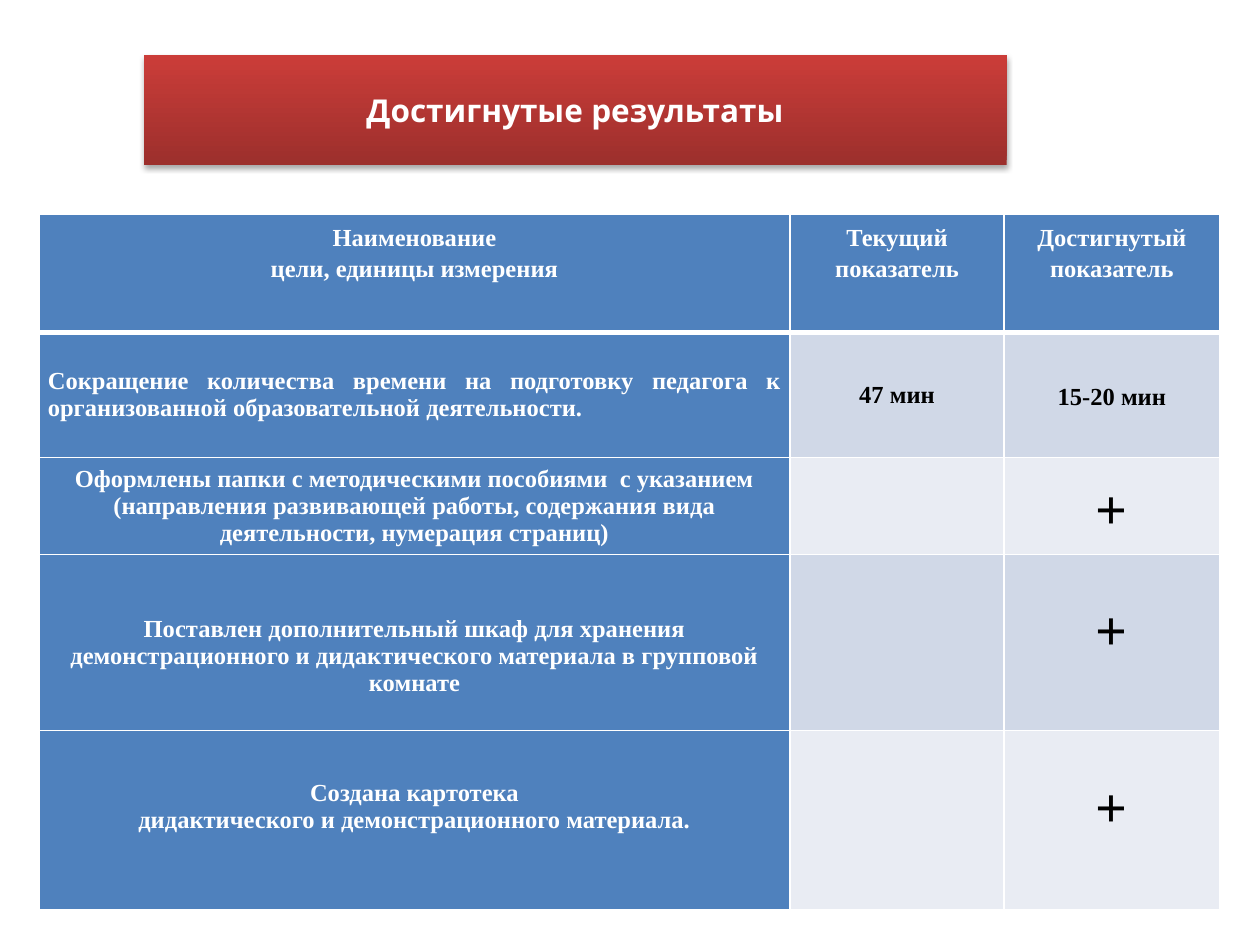
from lxml import etree
from pptx import Presentation
from pptx import util as u
from pptx.dml.color import RGBColor
from pptx.enum import text
from pptx.oxml import parse_xml
from pptx.oxml.ns import nsdecls, qn

FONT = "Times New Roman"
WHITE, BLACK, BLUE = "FFFFFF", "000000", "4F81BD"
BANDS = ("D0D8E7", "E9ECF3")
COLUMN_WIDTHS = (5.96, 1.7, 1.71)
ROW_HEIGHTS = (0.94, 0.99, 0.77, 1.4, 1.42)
LEFT, CENTER, JUSTIFY = text.PP_ALIGN.LEFT, text.PP_ALIGN.CENTER, text.PP_ALIGN.JUSTIFY

HEADERS = (
    "Наименование\nцели, единицы измерения",
    "Текущий показатель",
    "Достигнутый\nпоказатель",
)
# Goal, current value, achieved value, and format options for goal and result
RESULTS = (
    ("Сокращение количества времени на подготовку педагога к организованной "
     "образовательной деятельности.", "47 мин", "15-20 мин",
     {"align": JUSTIFY}, {}),
    ("Оформлены папки с методическими пособиями  с указанием (направления "
     "развивающей работы, содержания вида деятельности, нумерация страниц)",
     "", "+", {}, {"size": 32}),
    ("Поставлен дополнительный шкаф для хранения демонстрационного и "
     "дидактического материала в групповой комнате",
     "", "+", {"top": 0.27}, {"size": 32, "bottom": 0.3}),
    ("Создана картотека\nдидактического и демонстрационного материала.",
     "", "+", {"bottom": 0.26}, {"size": 32, "bottom": 0.3}),
)


def color(value):
    return RGBColor.from_string(value)


def write_text(frame, content, font=FONT, size=14, ink=WHITE, align=CENTER, spacing=1.0):
    """Fill a text frame with one bold paragraph for each line of content."""
    for number, line in enumerate(content.split("\n")):
        paragraph = frame.add_paragraph() if number else frame.paragraphs[0]
        paragraph.alignment = align
        paragraph.line_spacing = spacing
        run = paragraph.add_run()
        run.text = line
        run.font.name = font
        run.font.size = u.Pt(size)
        run.font.bold = True
        run.font.color.rgb = color(ink)


def add_shadow(shape):
    """Add a soft shadow falling straight down."""
    shape._element.spPr.append(parse_xml(
        f'<a:effectLst {nsdecls("a")}>'
        '<a:outerShdw blurRad="39370" dist="22860" dir="5400000" rotWithShape="0">'
        '<a:srgbClr val="000000"><a:alpha val="35000"/></a:srgbClr>'
        '</a:outerShdw></a:effectLst>'))


def set_borders(cell, bottom_width):
    """Draw white borders; they come before the fill in the cell properties."""
    properties = cell._tc.get_or_add_tcPr()
    widths = {"lnL": 0.96, "lnR": 0.96, "lnT": 0.96, "lnB": bottom_width}
    for position, (side, width) in enumerate(widths.items()):
        line = etree.Element(qn(f"a:{side}"), w=str(u.Pt(width)))
        fill = etree.SubElement(line, qn("a:solidFill"))
        etree.SubElement(fill, qn("a:srgbClr"), val=WHITE)
        properties.insert(position, line)


def fill_cell(cell, content, background, anchor=text.MSO_ANCHOR.MIDDLE,
              top=0.05, bottom=0.05, bottom_border=0.96, **text_format):
    cell.margin_left = cell.margin_right = u.Inches(0.07)
    cell.margin_top, cell.margin_bottom = u.Inches(top), u.Inches(bottom)
    cell.vertical_anchor = anchor
    cell.fill.solid()
    cell.fill.fore_color.rgb = color(background)
    set_borders(cell, bottom_border)
    if content:
        write_text(cell.text_frame, content, **text_format)


def add_title(slide):
    title = slide.shapes.title
    title.left, title.top = u.Inches(1.14), u.Inches(0.44)
    title.width, title.height = u.Inches(6.85), u.Inches(0.87)
    title.fill.gradient()
    title.fill.gradient_angle = 90
    for stop, value in zip(title.fill.gradient_stops, ("9C2F2C", "CB3D39")):
        stop.color.rgb = color(value)
    title.line.fill.background()
    add_shadow(title)
    title.text_frame.vertical_anchor = text.MSO_ANCHOR.MIDDLE
    write_text(title.text_frame, "Достигнутые результаты", font="League Spartan", size=18)


def add_results_table(slide):
    table = slide.shapes.add_table(
        len(ROW_HEIGHTS), len(COLUMN_WIDTHS), u.Inches(0.31), u.Inches(1.7),
        u.Inches(sum(COLUMN_WIDTHS)), u.Inches(sum(ROW_HEIGHTS))).table
    for column, width in zip(table.columns, COLUMN_WIDTHS):
        column.width = u.Inches(width)
    for row, height in zip(table.rows, ROW_HEIGHTS):
        row.height = u.Inches(height)

    # Header row with a thick rule below
    for column, header in enumerate(HEADERS):
        fill_cell(table.cell(0, column), header, BLUE, anchor=text.MSO_ANCHOR.TOP,
                  bottom_border=3, spacing=1.15)

    # Goals on blue, values on alternating bands
    for row, (goal, current, achieved, goal_format, result_format) in enumerate(RESULTS, 1):
        band = BANDS[(row - 1) % 2]
        fill_cell(table.cell(row, 0), goal, BLUE, **goal_format)
        fill_cell(table.cell(row, 1), current, band, ink=BLACK)
        fill_cell(table.cell(row, 2), achieved, band, ink=BLACK, spacing=1.15, **result_format)


def main():
    presentation = Presentation()
    presentation.slide_width, presentation.slide_height = u.Inches(10), u.Inches(7.5)
    slide = presentation.slides.add_slide(presentation.slide_layouts[5])
    add_title(slide)
    add_results_table(slide)
    presentation.save("out.pptx")


if __name__ == "__main__":
    main()
